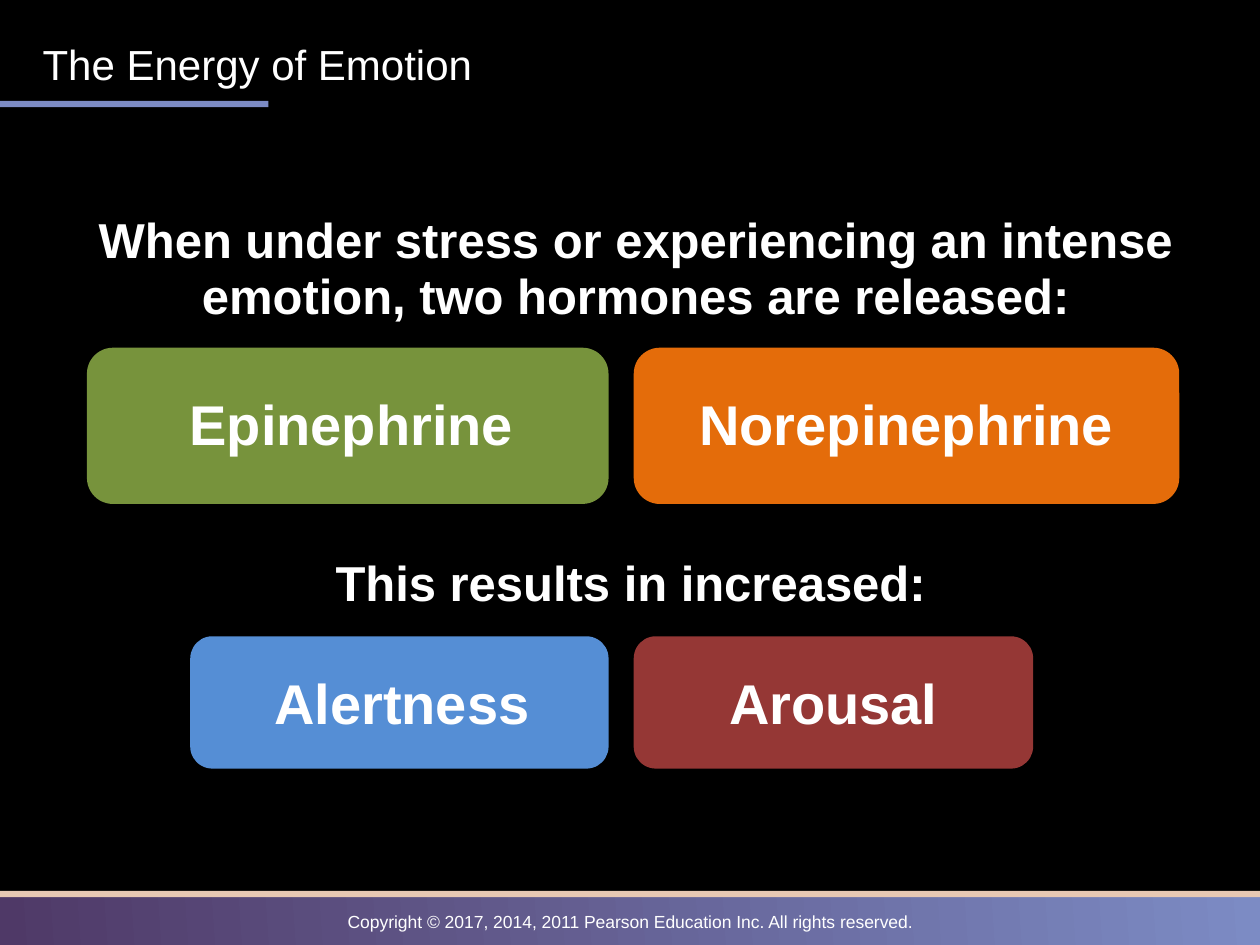
from dataclasses import dataclass

from pptx import Presentation
from pptx.dml.color import RGBColor
from pptx.enum.shapes import MSO_SHAPE
from pptx.enum.text import MSO_ANCHOR, PP_ALIGN
from pptx.util import Inches, Pt


@dataclass(frozen=True)
class Theme:
    font: str = "Arial"
    back: str = "000000"
    text: str = "FFFFFF"
    plum: str = "4F3967"
    blue: str = "7C8BC4"
    sand: str = "E7C8B3"
    green: str = "77933C"
    orange: str = "E46C0A"
    sky: str = "558ED5"
    red: str = "953735"
    title: int = 24
    lead: int = 28
    label: int = 32
    note: int = 10


THEME = Theme()


def add_box(slide, box, color, kind=MSO_SHAPE.RECTANGLE):
    shape = slide.shapes.add_shape(kind, *map(Inches, box))
    shape.shadow.inherit = False
    shape.fill.solid()
    shape.fill.fore_color.rgb = RGBColor.from_string(color)
    shape.line.fill.background()
    return shape


def add_text(slide, box, text, size, bold=False, align=PP_ALIGN.CENTER,
             anchor=MSO_ANCHOR.TOP, space=1.0):
    frame = slide.shapes.add_textbox(*map(Inches, box)).text_frame
    frame.word_wrap = True
    frame.vertical_anchor = anchor
    frame.text = text
    para = frame.paragraphs[0]
    para.alignment = align
    para.line_spacing = space
    font = para.runs[0].font
    font.name, font.size, font.bold = THEME.font, Pt(size), bold
    font.color.rgb = RGBColor.from_string(THEME.text)


def add_footer(slide, box):
    left, top, width, height = box
    band = add_box(slide, box, THEME.plum)
    band.fill.gradient()
    band.fill.gradient_angle = 4
    for stop, color in zip(band.fill.gradient_stops, (THEME.plum, THEME.blue)):
        stop.color.rgb = RGBColor.from_string(color)
    add_box(slide, (left, top - 0.01, width, 0.05), THEME.sand)
    add_text(slide, (left, top + 0.1, width, 0.27),
             "Copyright © 2017, 2014, 2011 Pearson Education Inc. "
             "All rights reserved.", THEME.note)


def add_title(slide, box, text):
    left, top, width, height = box
    add_box(slide, (0, top + height, 2.13, 0.05), THEME.blue)
    add_text(slide, box, text, THEME.title, align=PP_ALIGN.LEFT,
             anchor=MSO_ANCHOR.MIDDLE)


def add_lead(slide, box, text):
    add_text(slide, box, text, THEME.lead, bold=True, space=0.95)


def add_pair(slide, box, split, drop, cards):
    """Two cards with a fixed gap; split is the width of the first."""
    left, top, width, height = box
    gap = 0.2
    spans = ((left, split), (left + split + gap, width - split - gap))
    for (x, wide), (text, color, shift) in zip(spans, cards):
        add_box(slide, (x, top, wide, height), color,
                MSO_SHAPE.ROUNDED_RECTANGLE)
        add_text(slide, (x + 0.3 + shift, top + drop, wide - 0.6, 0.64),
                 text, THEME.label, bold=True)


def main():
    deck = Presentation()
    deck.slide_width, deck.slide_height = Inches(10), Inches(7.5)
    slide = deck.slides.add_slide(deck.slide_layouts[6])
    slide.background.fill.solid()
    slide.background.fill.fore_color.rgb = RGBColor.from_string(THEME.back)

    # Frame
    add_footer(slide, (0, 7.08, 10, 0.42))
    add_title(slide, (0.24, 0.21, 8.5, 0.59), "The Energy of Emotion")

    # Hormones
    add_lead(slide, (0.64, 1.65, 8.81, 0.88),
             "When under stress or experiencing an intense emotion, "
             "two hormones are released:")
    add_pair(slide, (0.69, 2.76, 8.67, 1.24), 4.14, 0.28,
             (("Epinephrine", THEME.green, 0.03),
              ("Norepinephrine", THEME.orange, 0)))

    # Effects
    add_lead(slide, (0.96, 4.37, 8.09, 0.55), "This results in increased:")
    add_pair(slide, (1.51, 5.05, 6.69, 1.05), 3.32, 0.21,
             (("Alertness", THEME.sky, 0.02),
              ("Arousal", THEME.red, 0)))

    deck.save("out.pptx")


if __name__ == "__main__":
    main()
